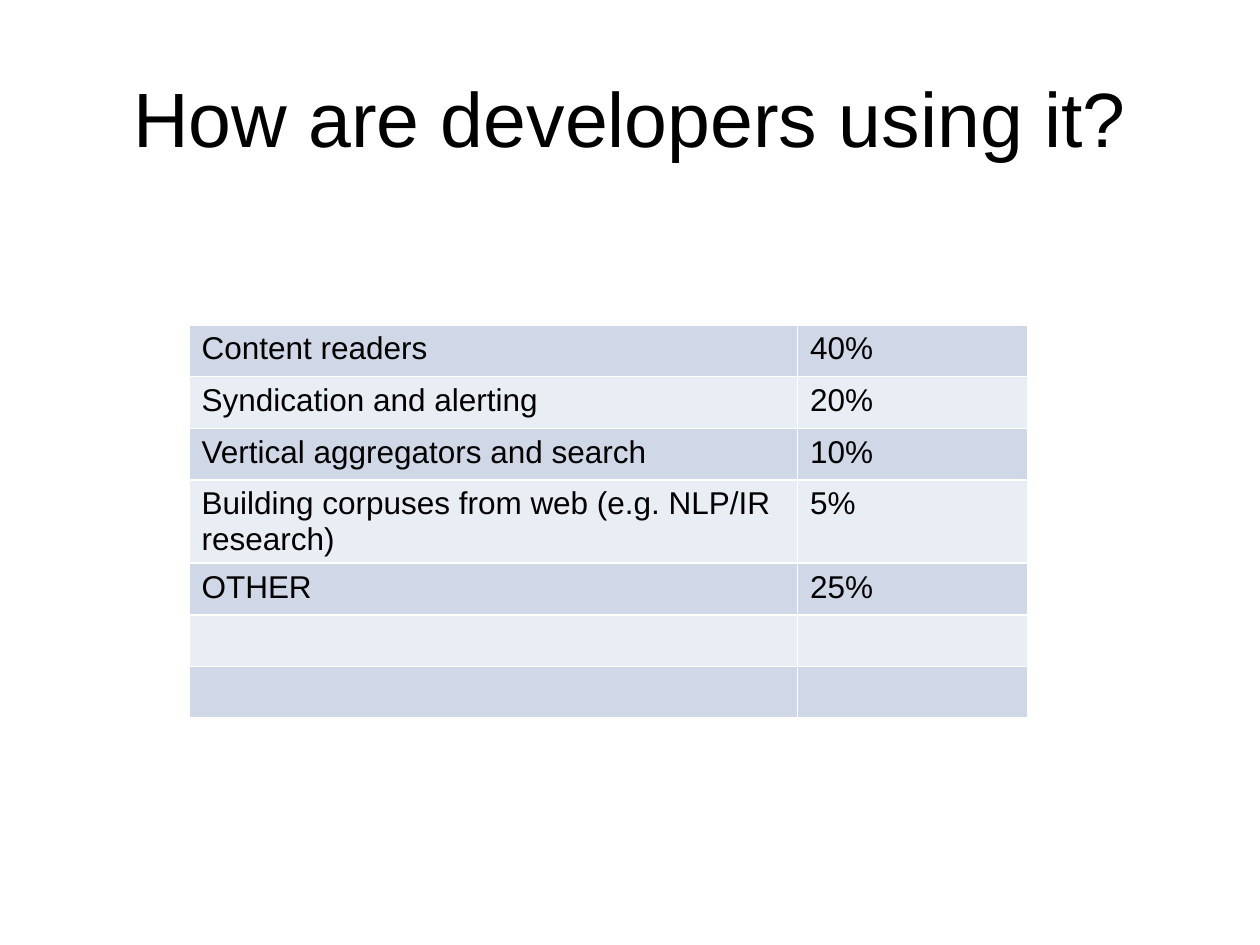
from typing import NamedTuple

from lxml.etree import SubElement
from pptx import Presentation
from pptx.dml.color import RGBColor
from pptx.enum.text import MSO_ANCHOR as Anchor, PP_ALIGN as Align
from pptx.oxml.ns import qn
from pptx.util import Inches, Pt

FONT = "Arial"
BLACK, WHITE = "000000", "FFFFFF"
BANDS = ("D0D8E8", "E9EDF4")
COLUMN_WIDTHS = (4.83, 1.83)
ROW_HEIGHT = 0.41


class Usage(NamedTuple):
    purpose: str = ""
    share: str = ""


USAGES = [
    Usage("Content readers", "40%"),
    Usage("Syndication and alerting", "20%"),
    Usage("Vertical aggregators and search", "10%"),
    Usage("Building corpuses from web (e.g. NLP/IR research)", "5%"),
    Usage("OTHER", "25%"),
    Usage(),
    Usage(),
]


def color(value: str) -> RGBColor:
    return RGBColor.from_string(value)


def add_run(paragraph, text: str, size: float) -> None:
    run = paragraph.add_run()
    run.text = text
    run.font.name = FONT
    run.font.size = Pt(size)
    run.font.bold = False
    run.font.color.rgb = color(BLACK)


def add_borders(cell, line_color: str, width: float) -> None:
    """Draw all four cell borders, placed before the fill as the schema asks."""
    properties = cell._tc.get_or_add_tcPr()
    for position, side in enumerate(("lnL", "lnR", "lnT", "lnB")):
        line = SubElement(properties, qn(f"a:{side}"), w=str(Pt(width)))
        fill = SubElement(line, qn("a:solidFill"))
        SubElement(fill, qn("a:srgbClr"), val=line_color)
        properties.insert(position, line)


def format_cell(cell, text: str, fill: str) -> None:
    cell.fill.solid()
    cell.fill.fore_color.rgb = color(fill)
    add_borders(cell, WHITE, 1)
    paragraph = cell.text_frame.paragraphs[0]
    if text:
        add_run(paragraph, text, 18)
    else:
        paragraph.font.size = Pt(18)


def add_title(slide, text: str) -> None:
    title = slide.shapes.title
    title.left, title.top = Inches(0.5), Inches(0.3)
    title.width, title.height = Inches(9), Inches(1.25)
    title.text_frame.vertical_anchor = Anchor.MIDDLE
    paragraph = title.text_frame.paragraphs[0]
    paragraph.alignment = Align.CENTER
    add_run(paragraph, text, 44)


def add_usage_table(slide, usages: list[Usage]) -> None:
    frame = slide.shapes.add_table(
        len(usages), len(COLUMN_WIDTHS), Inches(1.5), Inches(2.58),
        Inches(sum(COLUMN_WIDTHS)), Inches(ROW_HEIGHT * len(usages)))
    table = frame.table
    table.first_row = False
    for column, width in zip(table.columns, COLUMN_WIDTHS):
        column.width = Inches(width)
    for index, (row, usage) in enumerate(zip(table.rows, usages)):
        row.height = Inches(ROW_HEIGHT)
        for cell, text in zip(row.cells, usage):
            format_cell(cell, text, BANDS[index % 2])


def main() -> None:
    presentation = Presentation()
    presentation.slide_width = Inches(10)
    presentation.slide_height = Inches(7.5)
    # Title Only layout
    slide = presentation.slides.add_slide(presentation.slide_layouts[5])
    add_title(slide, "How are developers using it?")
    add_usage_table(slide, USAGES)
    presentation.save("out.pptx")


if __name__ == "__main__":
    main()
